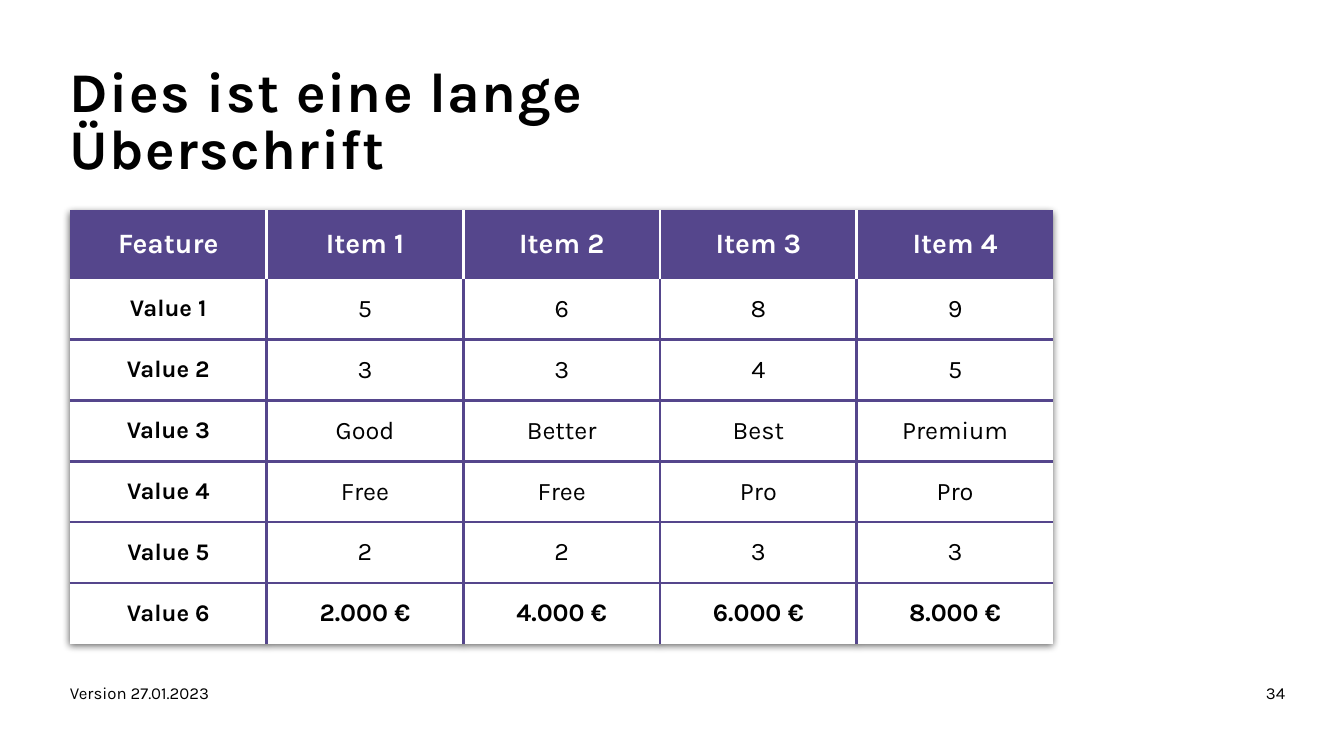
from lxml import etree
from pptx import Presentation, oxml
from pptx import util as u
from pptx.dml import color
from pptx.enum import text
from pptx.oxml import ns

COLORS = {"purple": "55468C", "white": "FFFFFF", "black": "000000"}
FONT = "Karla"
GRID_COLUMNS, GRID_ROWS = 192, 108
PLAIN_TABLE = "{2D5ABB26-0587-4C30-8999-92F81FD0307C}"

HEADER = ["Feature", "Item 1", "Item 2", "Item 3", "Item 4"]
VALUES = [
    ["Value 1", "5", "6", "8", "9"],
    ["Value 2", "3", "3", "4", "5"],
    ["Value 3", "Good", "Better", "Best", "Premium"],
    ["Value 4", "Free", "Free", "Pro", "Pro"],
    ["Value 5", "2", "2", "3", "3"],
    ["Value 6", "2.000 €", "4.000 €", "6.000 €", "8.000 €"],
]


class SlideBuilder:
    """Places styled elements on a grid of columns and rows."""

    def __init__(self, deck):
        self.slide = deck.slides.add_slide(deck.slide_layouts[5])
        self.column = deck.slide_width / GRID_COLUMNS
        self.row = deck.slide_height / GRID_ROWS

    def area(self, left, top, width, height):
        return (u.Emu(round(left * self.column)), u.Emu(round(top * self.row)),
                u.Emu(round(width * self.column)), u.Emu(round(height * self.row)))

    def set_text(self, frame, words, size, ink="black", bold=False, align=text.PP_ALIGN.LEFT):
        para = frame.paragraphs[0]
        para.text = words
        para.alignment = align
        para.font.name, para.font.size, para.font.bold = FONT, u.Pt(size), bold
        para.font.color.rgb = color.RGBColor.from_string(COLORS[ink])
        return para

    def fit_frame(self, frame):
        frame.word_wrap = True
        frame.auto_size = text.MSO_AUTO_SIZE.NONE
        frame.vertical_anchor = text.MSO_ANCHOR.TOP
        frame.margin_left = frame.margin_right = frame.margin_top = frame.margin_bottom = 0

    def title(self, words, *place):
        box = self.slide.shapes.title
        box.left, box.top, box.width, box.height = self.area(*place)
        self.fit_frame(box.text_frame)
        para = self.set_text(box.text_frame, words, 40, bold=True)
        para.line_spacing = 0.85
        para.runs[0].font._element.set("spc", "100")

    def label(self, words, *place, align=text.PP_ALIGN.LEFT):
        box = self.slide.shapes.add_textbox(*self.area(*place))
        self.fit_frame(box.text_frame)
        self.set_text(box.text_frame, words, 12, align=align)

    def border(self, cell, side, ink):
        line = etree.SubElement(cell._tc.get_or_add_tcPr(), ns.qn(f"a:ln{side}"), w=str(u.Pt(2.25)))
        fill = etree.SubElement(line, ns.qn("a:solidFill"))
        etree.SubElement(fill, ns.qn("a:srgbClr"), val=COLORS[ink])

    def table_shadow(self, table):
        properties = table._tbl.tblPr
        properties.find(ns.qn("a:tableStyleId")).text = PLAIN_TABLE
        properties.insert(0, oxml.parse_xml(
            f'<a:effectLst {ns.nsdecls("a")}>'
            '<a:outerShdw blurRad="63500" dist="25400" dir="5400000" algn="t" rotWithShape="0">'
            f'<a:srgbClr val="{COLORS["black"]}"><a:alpha val="60000"/></a:srgbClr>'
            '</a:outerShdw></a:effectLst>'))

    def table(self, rows, left, top, cell_width, header_height, row_height):
        last_row, last_column = len(rows) - 1, len(rows[0]) - 1
        place = self.area(left, top, cell_width * len(rows[0]), header_height + row_height * last_row)
        table = self.slide.shapes.add_table(len(rows), len(rows[0]), *place).table
        table.horz_banding = False
        self.table_shadow(table)
        for column in table.columns:
            column.width = u.Emu(round(cell_width * self.column))
        for r, row in enumerate(rows):
            height = row_height if r else header_height
            table.rows[r].height = u.Emu(round(height * self.row))
            for c, words in enumerate(row):
                # Lines run only between cells, never round the outside
                sides = {"L": c > 0, "R": c < last_column, "T": r > 1, "B": 0 < r < last_row}
                cell = table.cell(r, c)
                for side in (side for side, shown in sides.items() if shown):
                    self.border(cell, side, "purple" if r else "white")
                cell.fill.solid()
                cell.fill.fore_color.rgb = color.RGBColor.from_string(
                    COLORS["white" if r else "purple"])
                cell.margin_left = cell.margin_right = u.Inches(0.2)
                cell.margin_top = cell.margin_bottom = 0
                cell.vertical_anchor = text.MSO_ANCHOR.MIDDLE
                size = 20 if r == 0 else 17 if c == 0 else 18
                self.set_text(cell.text_frame, words, size, "black" if r else "white",
                              bold=r in (0, last_row) or c == 0, align=text.PP_ALIGN.CENTER)


def main():
    deck = Presentation()
    deck.slide_width, deck.slide_height = u.Inches(13.33), u.Inches(7.5)
    page = SlideBuilder(deck)

    # Heading
    page.title("Dies ist eine lange Überschrift", 10, 9.5, 118, 16.1)

    # Comparison table
    page.table([HEADER] + VALUES, 10, 30, 28.1, 9.8, 8.7)

    # Footer
    page.label("Version 27.01.2023", 10, 97.5, 118.5, 5.8)
    page.label("34", 152.6, 97.5, 31, 5.8, align=text.PP_ALIGN.RIGHT)

    deck.save("out.pptx")


if __name__ == "__main__":
    main()
